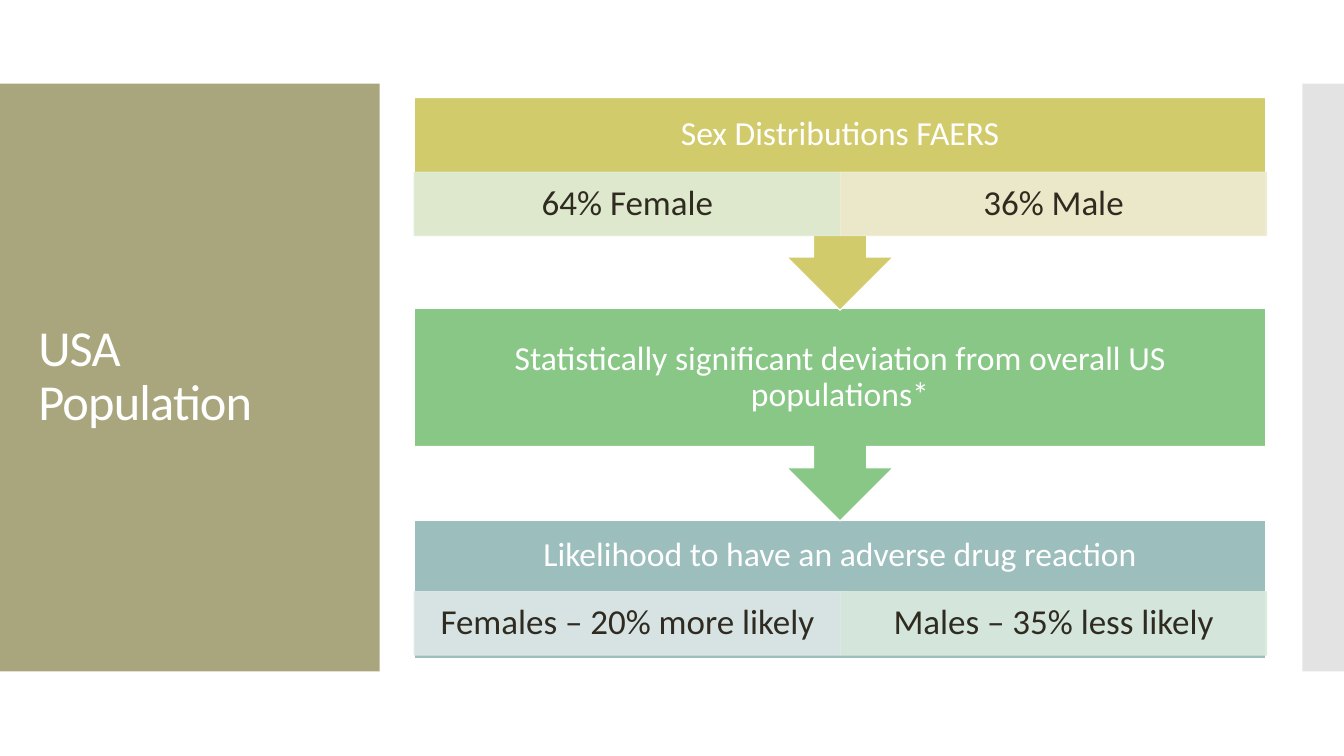
from dataclasses import dataclass

from lxml import etree
from pptx import Presentation
from pptx import util as u
from pptx.dml.color import RGBColor
from pptx.enum import shapes, text
from pptx.oxml import ns

COLOURS = {
    "white": "FFFFFF", "ink": "2F2B20", "title": "A9A57C", "edge": "C8C8C8",
    "distribution": "D2CB6C", "deviation": "88C785", "likelihood": "9CBEBD",
    "female share": "E0ECD8", "male share": "EEECD4",
    "female risk": "DEE8E8", "male risk": "DBEADF",
}
FONT = "Calibri"
RECT = shapes.MSO_SHAPE.RECTANGLE
CALLOUT = shapes.MSO_SHAPE.DOWN_ARROW_CALLOUT

# Positions in centimetres
SLIDE_W, SLIDE_H = 33.87, 19.05
PANEL_TOP, PANEL_H = 2.11, 14.81
FLOW_LEFT, FLOW_W = 10.44, 21.46
STEP_H, CALLOUT_H = 3.48, 5.36
DETAIL_W, DETAIL_H = 10.74, 1.6


@dataclass
class Detail:
    wording: str
    colour: str


@dataclass
class Step:
    heading: str
    colour: str
    top: float
    heading_h: float
    arrow: bool = True
    details: tuple[Detail, ...] = ()


STEPS = [
    Step("Sex Distributions FAERS", "distribution", 2.46, 1.88,
         details=(Detail("64% Female", "female share"),
                  Detail("36% Male", "male share"))),
    Step("Statistically significant deviation from overall US populations*",
         "deviation", 7.77, STEP_H),
    Step("Likelihood to have an adverse drug reaction", "likelihood",
         13.11, 1.8, arrow=False,
         details=(Detail("Females – 20% more likely", "female risk"),
                  Detail("Males – 35% less likely", "male risk"))),
]


def rgb(name: str) -> RGBColor:
    return RGBColor.from_string(COLOURS[name])


def apply(target, formats: dict) -> None:
    for name, value in formats.items():
        setattr(target, name, value)


def set_opacity(fill_format, element, percent: int) -> None:
    for colour in element.spPr.iter(ns.qn("a:srgbClr")):
        etree.SubElement(colour, ns.qn("a:alpha"), val=str(percent * 1000))


def add_block(slide, kind, box: tuple[float, ...], colour: str,
              outline: str | None = None, opacity: int = 100):
    block = slide.shapes.add_shape(kind, *map(u.Cm, box))
    block.shadow.inherit = False
    block.fill.solid()
    block.fill.fore_color.rgb = rgb(colour)
    if outline:
        block.line.color.rgb = rgb(outline)
        block.line.width = u.Pt(0.85)
    else:
        block.line.fill.background()
    if opacity < 100:
        set_opacity(block.fill, block.element, opacity)
    return block


def write(shape, wording: str, size: float, colour: str, align,
          frame_formats: dict) -> None:
    frame = shape.text_frame
    frame.text = wording
    apply(frame, {"word_wrap": True, "auto_size": text.MSO_AUTO_SIZE.NONE,
                  "vertical_anchor": text.MSO_ANCHOR.MIDDLE, **frame_formats})
    paragraph = frame.paragraphs[0]
    apply(paragraph, {"alignment": align, "line_spacing": 0.9})
    font = paragraph.runs[0].font
    apply(font, {"name": FONT, "size": u.Pt(size)})
    font.color.rgb = rgb(colour)


def add_step(slide, step: Step) -> None:
    kind, height = (CALLOUT, CALLOUT_H) if step.arrow else (RECT, STEP_H)
    block = add_block(slide, kind, (FLOW_LEFT, step.top, FLOW_W, height),
                      step.colour, "white")
    # The bottom margin keeps the heading above the details
    write(block, step.heading, 24, "white", text.PP_ALIGN.CENTER,
          {"margin_left": u.Cm(0.48), "margin_right": u.Cm(0.48),
           "margin_top": 0, "margin_bottom": u.Cm(STEP_H - step.heading_h)})
    for column, detail in enumerate(step.details):
        box = (FLOW_LEFT + column * DETAIL_W, step.top + step.heading_h,
               DETAIL_W, DETAIL_H)
        cell = add_block(slide, RECT, box, detail.colour, detail.colour, 90)
        write(cell, detail.wording, 25, "ink", text.PP_ALIGN.CENTER,
              {"margin_left": u.Cm(0.48), "margin_right": u.Cm(0.48),
               "margin_top": u.Cm(0.08), "margin_bottom": u.Cm(0.08)})


def add_title(slide) -> None:
    title = slide.shapes.title
    apply(title, {"left": u.Cm(0.71), "top": u.Cm(3.12),
                  "width": u.Cm(8.18), "height": u.Cm(12.78)})
    write(title, "USA Population", 36, "white", text.PP_ALIGN.LEFT,
          {"margin_right": u.Cm(0.5)})
    title.text_frame.paragraphs[0].runs[0].font._element.set("spc", "-60")
    # Bring the title in front of its panel
    title.element.getparent().append(title.element)


def main() -> None:
    deck = Presentation()
    apply(deck, {"slide_width": u.Cm(SLIDE_W), "slide_height": u.Cm(SLIDE_H)})
    slide = deck.slides.add_slide(deck.slide_layouts.get_by_name("Title Only"))

    # Side panels and title
    add_block(slide, RECT, (0, PANEL_TOP, 9.57, PANEL_H), "title")
    add_block(slide, RECT, (32.82, PANEL_TOP, 1.05, PANEL_H), "edge", opacity=50)
    add_title(slide)

    # Flow, drawn from the last step up so that arrow tips stay in front
    for step in reversed(STEPS):
        add_step(slide, step)

    deck.save("out.pptx")


if __name__ == "__main__":
    main()
